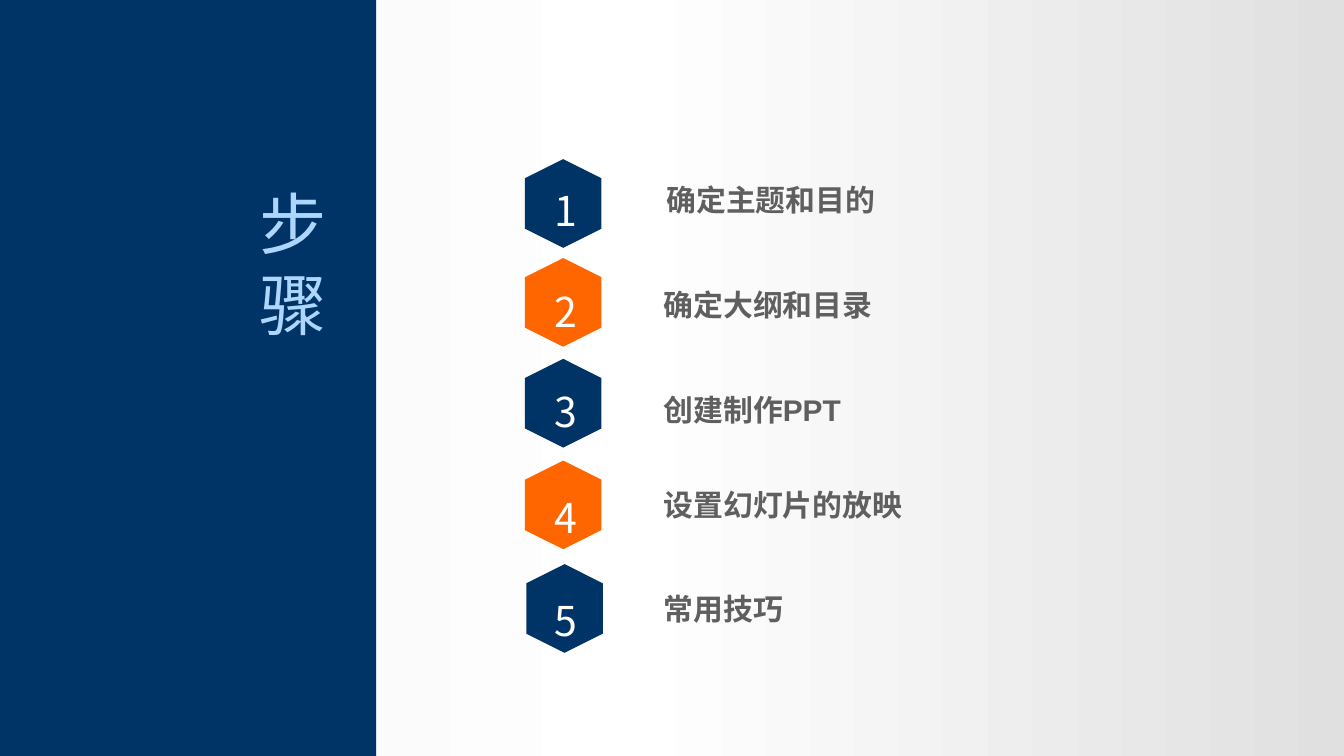
from copy import deepcopy
from pptx import Presentation
from pptx.dml.color import RGBColor
from pptx.enum.shapes import MSO_SHAPE as SHAPE
from pptx.enum.text import MSO_ANCHOR as ANCHOR, MSO_AUTO_SIZE as AUTO, PP_ALIGN as ALIGN
from pptx.util import Pt

W, H = 720, 405
CJK = "Noto Sans CJK SC"
COLORS = {"navy": "003366", "orange": "FF6600", "sky": "ADD6FF", "grey": "5F5F5F", "white": "FFFFFF"}
GRADIENT = [(0, "E0E0E0"), (0.53, "FFFFFF"), (1, "F2F2F2")]
TITLE = ["步", "骤"]
STEPS = [
    # text, label (left, top, width, height), hexagon (left, top), number top
    ("确定主题和目的", (350, 90, 299, 30), (278, 88.5), 88),
    ("确定大纲和目录", (348.5, 146, 278, 29), (278, 141.5), 142),
    ("创建制作PPT", (348.5, 202.5, 234, 29), (278, 195.5), 195.5),
    ("设置幻灯片的放映", (348.5, 253.5, 234, 29), (278, 250), 252),
    ("常用技巧", (348.5, 309, 234, 30), (278.75, 305.5), 307.5),
]


def rgb(value):
    return RGBColor.from_string(value)


def add_shape(shapes, kind, box, color=None):
    sp = shapes.add_shape(kind, *map(Pt, box))
    sp.shadow.inherit = False
    sp.line.fill.background()
    if color:
        sp.fill.solid()
        sp.fill.fore_color.rgb = rgb(COLORS[color])
    return sp


def write(tf, lines, font, size, color, spacing, align=ALIGN.LEFT, bold=False):
    tf.vertical_anchor = ANCHOR.TOP
    tf.text = "\n".join(lines)
    for p in tf.paragraphs:
        p.alignment, p.line_spacing = align, spacing
        p.font.name, p.font.size, p.font.bold = font, Pt(size), bold
        p.font.color.rgb = rgb(COLORS[color])


def add_text(shapes, box, *args, **kwargs):
    tf = shapes.add_textbox(*map(Pt, box)).text_frame
    tf.word_wrap = True
    write(tf, *args, **kwargs)
    return tf


def add_backdrop(shapes):
    sp = add_shape(shapes, SHAPE.RECTANGLE, (0, 0, W, H))
    sp.fill.gradient()
    sp.fill.gradient_angle = 180
    stops = sp._element.spPr.find(".//{*}gsLst")
    stops.append(deepcopy(stops[-1]))
    for stop, (position, color) in zip(sp.fill.gradient_stops, GRADIENT):
        stop.position = position
        stop.color.rgb = rgb(color)


def add_title(s):
    sp = s.shapes.title
    sp.left, sp.top, sp.width, sp.height = map(Pt, (132, 94, 63, 116))
    sp.text_frame.word_wrap = False
    sp.text_frame.auto_size = AUTO.NONE
    write(sp.text_frame, TITLE, CJK, 36, "sky", Pt(43.4))
    s.shapes._spTree.append(sp._element)


def add_step(shapes, number, text, label, hexagon, top):
    add_text(shapes, label, [text], "Arial", 16, "grey", 1.2, bold=True)
    group = shapes.add_group_shape().shapes
    color = "navy" if number % 2 else "orange"
    sp = add_shape(group, SHAPE.HEXAGON, (*hexagon, 47.5, 41), color)
    sp.rotation = 270
    tf = add_text(group, (281.5, top, 43, 37), [str(number)], CJK, 22, "white", Pt(35), ALIGN.CENTER)
    tf.margin_left = tf.margin_right = Pt(5)
    tf.margin_top = tf.margin_bottom = Pt(3)


def main():
    """Build the slide that lists the five steps."""
    prs = Presentation()
    prs.slide_width, prs.slide_height = Pt(W), Pt(H)
    s = prs.slides.add_slide(prs.slide_layouts[5])
    add_backdrop(s.shapes)
    add_shape(s.shapes, SHAPE.RECTANGLE, (0, 0, 201.5, H), "navy")
    add_title(s)
    for number, step in enumerate(STEPS, 1):
        add_step(s.shapes, number, *step)
    prs.save("out.pptx")


if __name__ == "__main__":
    main()
